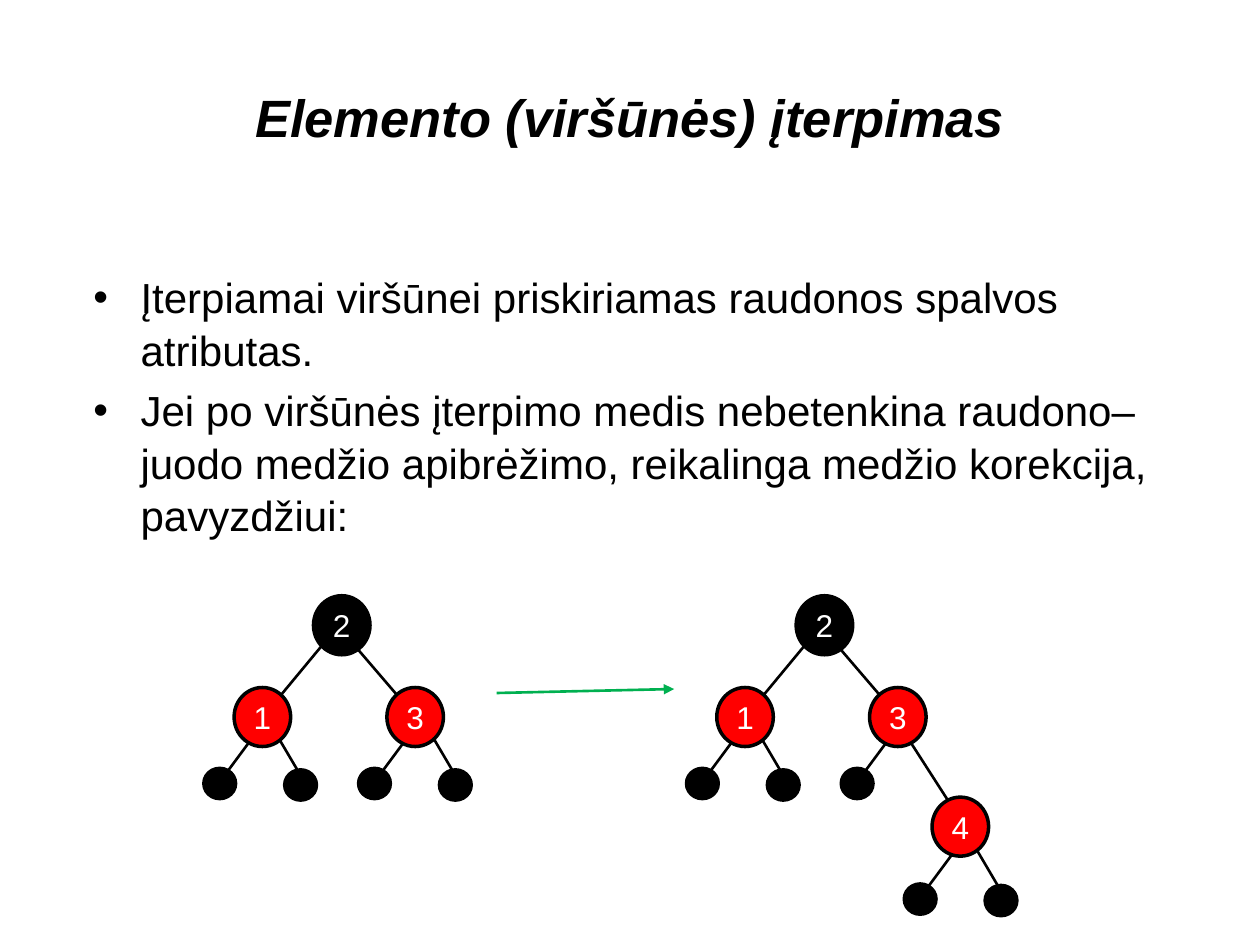
from dataclasses import dataclass

import pptx
import pptx.dml.color
import pptx.enum.shapes
import pptx.enum.text
import pptx.oxml.ns
import pptx.util
from lxml import etree

Cm = pptx.util.Cm
Pt = pptx.util.Pt
RGBColor = pptx.dml.color.RGBColor
MSO_ANCHOR = pptx.enum.text.MSO_ANCHOR
PP_ALIGN = pptx.enum.text.PP_ALIGN
qn = pptx.oxml.ns.qn

BLACK = RGBColor(0x00, 0x00, 0x00)
WHITE = RGBColor(0xFF, 0xFF, 0xFF)
RED = RGBColor(0xFF, 0x00, 0x00)
GREEN = RGBColor(0x00, 0xB0, 0x50)
FONT = "Arial"

NODE_SIZE = (1.14, 1.19)
LEAF_SIZE = (0.64, 0.61)
LEAF_GAP = (1.63, 0.03)  # from the left leaf to the right one
TREE_TOP = 12.01

Point = tuple[float, float]


@dataclass
class Node:
    """Tree node, in cm from the top left corner of the root."""
    key: str
    at: Point
    fill: RGBColor
    leaf: Point | None = None  # left leaf, from the node's corner
    has_right_leaf: bool = True


@dataclass
class Edge:
    start: Point
    end: Point


@dataclass
class Tree:
    left: float
    nodes: list[Node]
    edges: list[Edge]


# Edges to a left and a right leaf, from the leaf's corner
LEAF_EDGES = [Edge((0.41, 0.15), (1.07, -0.74)), Edge((0.33, 0.13), (-0.33, -0.99))]

ROOT = Node("2", (0, 0), BLACK)
NODE_1 = Node("1", (-1.6, 1.85), RED, (-0.61, 1.63))
NODE_3 = Node("3", (1.48, 1.85), RED, (-0.57, 1.63))
NODE_3_PARENT = Node("3", NODE_3.at, RED, NODE_3.leaf, has_right_leaf=False)
NODE_4 = Node("4", (2.74, 4.06), RED, (-0.56, 1.75))
ROOT_EDGES = [Edge((0.43, 0.69), (-1.02, 2.44)), Edge((0.56, 0.69), (2.06, 2.44))]
NEW_EDGE = Edge((2.06, 2.57), (3.3, 4.5))

TREES = [
    Tree(6.32, [ROOT, NODE_1, NODE_3], ROOT_EDGES),
    Tree(16.05, [ROOT, NODE_1, NODE_3_PARENT, NODE_4], ROOT_EDGES + [NEW_EDGE]),
]

BULLETS = [
    "Įterpiamai viršūnei priskiriamas raudonos spalvos atributas.",
    "Jei po viršūnės įterpimo medis nebetenkina raudono–juodo medžio "
    "apibrėžimo, reikalinga medžio korekcija, pavyzdžiui:",
]


def shift(a: Point, b: Point) -> Point:
    return a[0] + b[0], a[1] + b[1]


def add_run(p, text: str, size: float, color: RGBColor):
    r = p.add_run()
    r.text = text
    r.font.name = FONT
    r.font.size = Pt(size)
    r.font.color.rgb = color
    return r


def place(sp, left: float, top: float, width: float, height: float) -> None:
    sp.left, sp.top, sp.width, sp.height = Cm(left), Cm(top), Cm(width), Cm(height)


def add_line(s, start: Point, end: Point, color: RGBColor = BLACK):
    line = s.shapes.add_connector(
        pptx.enum.shapes.MSO_CONNECTOR.STRAIGHT, *map(Cm, start + end))
    line.line.color.rgb = color
    line.line.width = Pt(1.5)
    etree.SubElement(line._element.spPr, qn("a:effectLst"))
    return line


def add_circle(s, at: Point, size: Point, fill: RGBColor):
    sp = s.shapes.add_shape(pptx.enum.shapes.MSO_SHAPE.OVAL, *map(Cm, at + size))
    sp.shadow.inherit = False
    sp.fill.solid()
    sp.fill.fore_color.rgb = fill
    sp.line.color.rgb = BLACK
    sp.line.width = Pt(2)
    return sp


def add_node(s, at: Point, node: Node) -> None:
    sp = add_circle(s, at, NODE_SIZE, node.fill)
    tf = sp.text_frame
    tf.margin_left = tf.margin_right = tf.margin_top = tf.margin_bottom = 0
    tf.vertical_anchor = MSO_ANCHOR.MIDDLE
    p = tf.paragraphs[0]
    p.alignment = PP_ALIGN.CENTER
    add_run(p, node.key, 18, WHITE)


def add_tree(s, tree: Tree) -> None:
    root = (tree.left, TREE_TOP)
    # Edges lie behind the circles
    for edge in tree.edges:
        add_line(s, shift(root, edge.start), shift(root, edge.end))
    for node in tree.nodes:
        if node.leaf is None:
            continue
        leaf = shift(shift(root, node.at), node.leaf)
        leaves = [leaf, shift(leaf, LEAF_GAP)] if node.has_right_leaf else [leaf]
        for corner, edge in zip(leaves, LEAF_EDGES):
            add_line(s, shift(corner, edge.start), shift(corner, edge.end))
            add_circle(s, corner, LEAF_SIZE, BLACK)
    for node in tree.nodes:
        add_node(s, shift(root, node.at), node)


def add_title(s) -> None:
    sp = s.shapes.title
    place(sp, 1.27, 0.76, 22.86, 3.18)
    tf = sp.text_frame
    tf.vertical_anchor = MSO_ANCHOR.MIDDLE
    p = tf.paragraphs[0]
    p.alignment = PP_ALIGN.CENTER
    r = add_run(p, "Elemento (viršūnės) įterpimas", 30, BLACK)
    r.font.bold = r.font.italic = True


def add_body(s) -> None:
    sp = s.placeholders[1]
    place(sp, 1.63, 5.31, 22.58, 9.14)
    tf = sp.text_frame
    tf.auto_size = pptx.enum.text.MSO_AUTO_SIZE.NONE
    for i, text in enumerate(BULLETS):
        p = tf.add_paragraph() if i else tf.paragraphs[0]
        p.space_before = Pt(4.8 if i else 0)
        p.line_spacing = 1.04
        pPr = p._p.get_or_add_pPr()
        pPr.set("marL", str(Cm(0.95)))
        pPr.set("indent", str(-Cm(0.95)))
        etree.SubElement(pPr, qn("a:buFont"), typeface=FONT)
        etree.SubElement(pPr, qn("a:buChar"), char="•")
        add_run(p, text, 24, BLACK)


def main() -> None:
    prs = pptx.Presentation()
    prs.slide_width, prs.slide_height = Cm(25.4), Cm(19.05)
    s = prs.slides.add_slide(prs.slide_layouts[1])

    # Title and list
    add_title(s)
    add_body(s)

    # Trees before and after the insertion
    for tree in TREES:
        add_tree(s, tree)

    # Arrow between the trees
    arrow = add_line(s, (10.01, 13.97), (13.59, 13.89), GREEN)
    etree.SubElement(arrow.line._get_or_add_ln(), qn("a:tailEnd"), type="triangle")

    prs.save("out.pptx")


if __name__ == "__main__":
    main()
